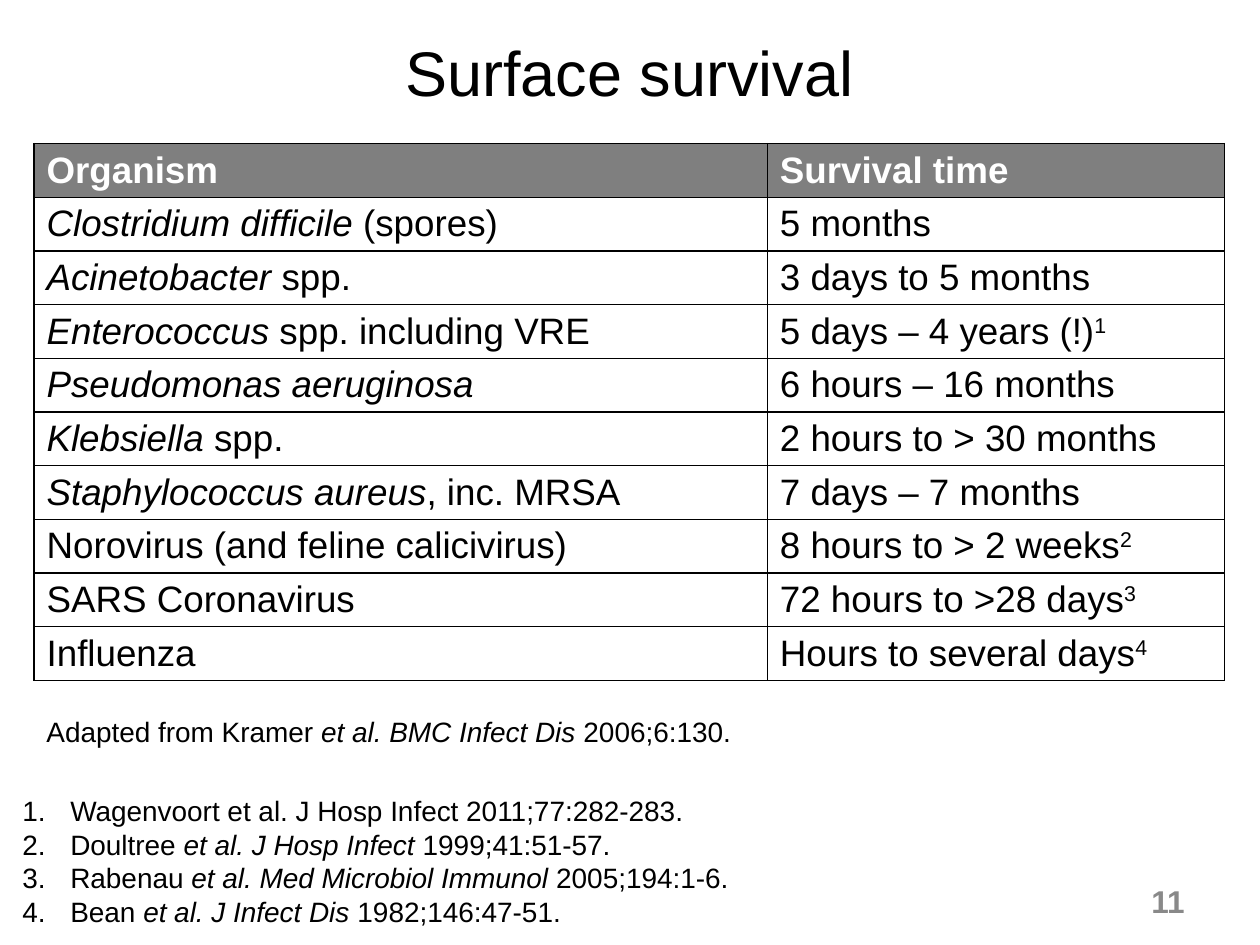
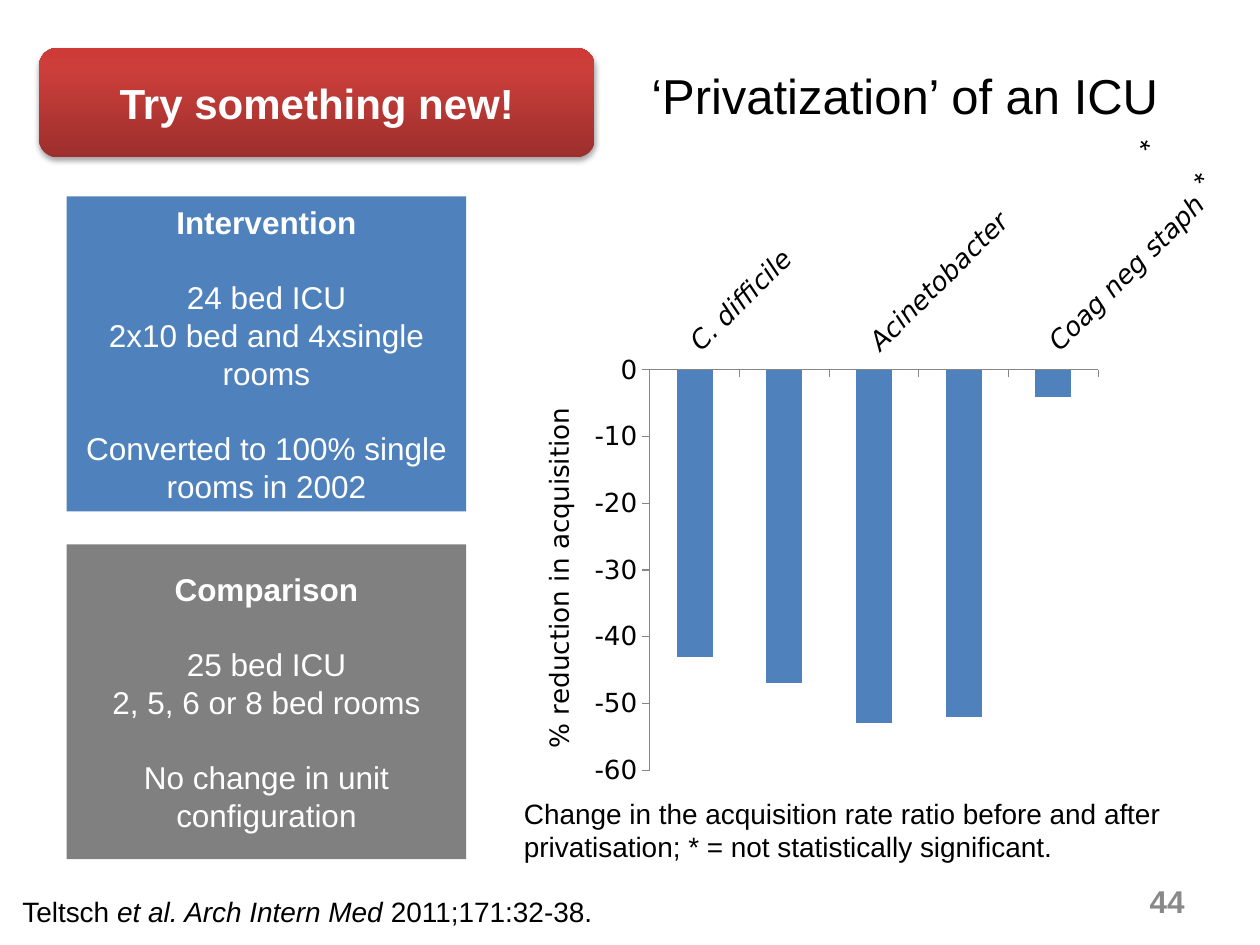
import copy

import pptx
import pptx.chart.data
import pptx.dml.color
import pptx.enum.chart
import pptx.enum.shapes
import pptx.enum.text
import pptx.oxml
import pptx.oxml.ns
import pptx.util

Inches = pptx.util.Inches
Pt = pptx.util.Pt
qn = pptx.oxml.ns.qn
ALIGN = pptx.enum.text.PP_ALIGN
ANCHOR = pptx.enum.text.MSO_ANCHOR
SHAPE = pptx.enum.shapes.MSO_SHAPE

COLORS = {
    "text": "000000",
    "white": "FFFFFF",
    "header": "7F7F7F",
    "blue": "4F81BD",
    "grey": "808080",
    "number": "898989",
    "axis": "868686",
}
BANNER_STOPS = [(0, "9C2F2D"), (0.8, "CB3E3A"), (1, "CE3B37")]

SURVIVAL = [
    ("Organism", "Survival time"),
    ("_Clostridium difficile_ (spores)", "5 months"),
    ("_Acinetobacter_ spp.", "3 days to 5 months"),
    ("_Enterococcus_ spp. including VRE", "5 days – 4 years (!)^1^"),
    ("_Pseudomonas aeruginosa_", "6 hours – 16 months"),
    ("_Klebsiella_ spp.", "2 hours to > 30 months"),
    ("_Staphylococcus aureus_, inc. MRSA", "7 days – 7 months"),
    ("Norovirus (and feline calicivirus)", "8 hours to > 2 weeks^2^"),
    ("SARS Coronavirus", "72 hours to >28 days^3^"),
    ("Influenza", "Hours to several days^4^"),
]
REFERENCES = [
    "Wagenvoort et al. J Hosp Infect 2011;77:282-283.",
    "Doultree _et al. J Hosp Infect_ 1999;41:51-57.",
    "Rabenau _et al. Med Microbiol Immunol_ 2005;194:1-6.",
    "Bean _et al. J Infect Dis_ 1982;146:47-51.",
]
ACQUISITION = [
    ("C. difficile", -43),
    ("", -47),
    ("Acinetobacter", -53),
    ("", -52),
    ("Coag neg staph", -4),
]


def rgb(value):
    return pptx.dml.color.RGBColor.from_string(COLORS.get(value, value))


def xml(text):
    """Parse one element whose tag carries the a: or c: prefix."""
    prefix = text[1]
    return pptx.oxml.parse_xml(
        text.replace(" ", f" {pptx.oxml.ns.nsdecls(prefix)} ", 1))


def apply(target, values):
    for name, value in values.items():
        setattr(target, name, value)


def set_layout(parent, index, fractions, target=""):
    """Place a chart part by x, y (w, h) fractions of the chart."""
    for layout in parent.findall(qn("c:layout")):
        parent.remove(layout)
    sizes = "".join(f'<c:{n} val="{v}"/>' for n, v in zip("xywh", fractions))
    parent.insert(index, xml(
        f'<c:layout ><c:manualLayout>{target}<c:xMode val="edge"/>'
        f'<c:yMode val="edge"/>{sizes}</c:manualLayout></c:layout>'))


class Deck:
    font = "Arial"

    def __init__(self):
        self.prs = pptx.Presentation()
        self.prs.slide_width, self.prs.slide_height = Inches(10), Inches(7.5)
        self.s = None

    def slide(self, number):
        self.s = self.prs.slides.add_slide(self.prs.slide_layouts[6])
        self.text((7.17, 6.95, 2.33, 0.4), [str(number)], 18, "number",
                  bold=True, align=ALIGN.RIGHT, anchor=ANCHOR.MIDDLE)

    def runs(self, p, text, size, color, bold=False):
        """Write text into p; _..._ is italic and ^...^ is superscript."""
        for i, part in enumerate(text.split("_")):
            for j, piece in enumerate(part.split("^")):
                if not piece:
                    continue
                r = p.add_run()
                r.text = piece
                apply(r.font, {"name": self.font, "size": Pt(size),
                               "bold": bold, "italic": i % 2 == 1})
                r.font.color.rgb = rgb(color)
                if j % 2:
                    r.font._element.set("baseline", "30000")

    def fill_frame(self, tf, lines, size, color, bold=False,
                   align=ALIGN.LEFT, anchor=ANCHOR.TOP):
        apply(tf, {"word_wrap": True, "vertical_anchor": anchor})
        for i, line in enumerate(lines):
            p = tf.add_paragraph() if i else tf.paragraphs[0]
            p.alignment = align
            self.runs(p, line, size, color, bold)

    def text(self, box, lines, size=16, color="text", rotation=0, **style):
        sp = self.s.shapes.add_textbox(*map(Inches, box))
        sp.rotation = rotation
        self.fill_frame(sp.text_frame, lines, size, color, **style)
        return sp

    def title(self, box, text, size, anchor=ANCHOR.MIDDLE):
        return self.text(box, [text], size, align=ALIGN.CENTER, anchor=anchor)

    def numbered(self, box, lines):
        sp = self.text(box, lines)
        for p in sp.text_frame.paragraphs:
            pPr = p._p.get_or_add_pPr()
            pPr.set("marL", str(Inches(0.38)))
            pPr.set("indent", str(-Inches(0.38)))
            pPr.append(xml('<a:buFont typeface="+mj-lt"/>'))
            pPr.append(xml('<a:buAutoNum type="arabicPeriod"/>'))

    def shape(self, kind, box):
        sp = self.s.shapes.add_shape(kind, *map(Inches, box))
        sp.shadow.inherit = False
        sp.line.fill.background()
        return sp

    def panel(self, top, color, heading, facts, result):
        sp = self.shape(SHAPE.RECTANGLE, (0.53, top, 3.17, 2.5))
        sp.fill.solid()
        sp.fill.fore_color.rgb = rgb(color)
        tf = sp.text_frame
        self.fill_frame(tf, [heading, *facts, result], 18, "white",
                        align=ALIGN.CENTER, anchor=ANCHOR.MIDDLE)
        tf.paragraphs[0].runs[0].font.bold = True
        for p in (tf.paragraphs[1], tf.paragraphs[-1]):
            p.space_before = Pt(21.5)

    def banner(self, box, text):
        sp = self.shape(SHAPE.ROUNDED_RECTANGLE, box)
        sp.fill.gradient()
        sp.fill.gradient_angle = 90
        stops = sp._element.spPr.find(f".//{qn('a:gsLst')}")
        stops.append(copy.deepcopy(stops[-1]))
        for stop, (position, color) in zip(sp.fill.gradient_stops, BANNER_STOPS):
            stop.position = position
            stop.color.rgb = rgb(color)
        sp._element.spPr.find(qn("a:effectLst")).append(xml(
            f'<a:outerShdw blurRad="{Pt(3.1)}" dist="{Pt(1.8)}" dir="5400000" '
            'rotWithShape="0"><a:srgbClr val="000000"><a:alpha val="35000"/>'
            '</a:srgbClr></a:outerShdw>'))
        self.fill_frame(sp.text_frame, [text], 24, "white", bold=True,
                        align=ALIGN.CENTER, anchor=ANCHOR.MIDDLE)
        sp.text_frame.paragraphs[0].space_before = Pt(2)

    def table(self, box, widths, rows):
        table = self.s.shapes.add_table(
            len(rows), len(widths), *map(Inches, box)).table
        for column, width in zip(table.columns, widths):
            column.width = Inches(width)
        for i, row in enumerate(rows):
            header = i == 0
            for j, text in enumerate(row):
                cell = table.cell(i, j)
                apply(cell, {"vertical_anchor": ANCHOR.MIDDLE,
                             "margin_top": Inches(0.03),
                             "margin_bottom": Inches(0.03)})
                cell.fill.solid()
                cell.fill.fore_color.rgb = rgb("header" if header else "white")
                self.runs(cell.text_frame.paragraphs[0], text, 21,
                          "white" if header else "text", header)
                self.borders(cell)

    def borders(self, cell):
        tcPr = cell._tc.get_or_add_tcPr()
        for k, side in enumerate("LRTB"):
            tcPr.insert(k, xml(
                f'<a:ln{side} w="{Pt(1)}"><a:solidFill><a:srgbClr '
                f'val="{COLORS["text"]}"/></a:solidFill></a:ln{side}>'))

    def column_chart(self, box, values, axis_title, title_at, plot):
        """Add a column chart; title_at and plot are fractions of the chart."""
        enum = pptx.enum.chart
        data = pptx.chart.data.CategoryChartData()
        data.categories = [label for label, _ in values]
        data.add_series("Series 1", [value for _, value in values])
        chart = self.s.shapes.add_chart(
            enum.XL_CHART_TYPE.COLUMN_CLUSTERED, *map(Inches, box), data).chart
        apply(chart, {"has_legend": False, "has_title": False})
        apply(chart.font, {"name": "DejaVu Sans", "size": Pt(15)})
        chart.font.color.rgb = rgb("text")

        bars = chart.plots[0]
        apply(bars, {"gap_width": 150, "vary_by_categories": False})
        series = bars.series[0]
        series.invert_if_negative = False
        series.format.fill.solid()
        series.format.fill.fore_color.rgb = rgb("blue")

        cat, val = chart.category_axis, chart.value_axis
        for axis in (cat, val):
            apply(axis, {"has_major_gridlines": False,
                         "major_tick_mark": enum.XL_TICK_MARK.OUTSIDE,
                         "minor_tick_mark": enum.XL_TICK_MARK.NONE})
            axis.format.line.color.rgb = rgb("axis")
        cat.tick_label_position = enum.XL_TICK_LABEL_POSITION.HIGH
        cat.tick_labels.font.italic = True
        apply(val, {"minimum_scale": -60, "maximum_scale": 0, "major_unit": 10})
        tf = val.axis_title.text_frame
        tf.text = axis_title
        apply(tf.paragraphs[0].runs[0].font,
              {"name": "DejaVu Sans", "size": Pt(15), "bold": False})

        root = chart.element
        for place, degrees in (("c:catAx/c:txPr", -45), ("c:valAx/c:title", -90)):
            body = root.xpath(f".//{place}//a:bodyPr")[0]
            body.set("rot", str(degrees * 60000))
            body.set("vert", "horz")
        set_layout(root.xpath(".//c:valAx/c:title")[0], 1, title_at)
        set_layout(root.xpath(".//c:plotArea")[0], 0, plot,
                   '<c:layoutTarget val="inner"/>')


def survival_slide(deck):
    deck.slide(11)
    deck.title((0.39, 0.06, 9.21, 1.01), "Surface survival", 36)
    deck.table((0.27, 1.14, 9.45, 4.26), (5.82, 3.63), SURVIVAL)
    deck.text((0.27, 5.62, 5.71, 0.37),
              ["Adapted from Kramer _et al. BMC Infect Dis_ 2006;6:130."])
    deck.numbered((0.08, 6.25, 5.87, 1.17), REFERENCES)


def privatization_slide(deck):
    deck.slide(44)
    deck.text((0.08, 7.05, 5.74, 0.37),
              ["Teltsch _et al. Arch Intern Med_ 2011;171:32-38."])
    deck.panel(1.56, "blue", "Intervention",
               ["24 bed ICU", "2x10 bed and 4xsingle rooms"],
               "Converted to 100% single rooms in 2002")
    deck.panel(4.32, "grey", "Comparison",
               ["25 bed ICU", "2, 5, 6 or 8 bed rooms"],
               "No change in unit configuration")
    deck.text((4.06, 6.27, 5.94, 0.64),
              ["Change in the acquisition rate ratio before and after "
               "privatisation; * = not statistically significant."])
    deck.column_chart((4.14, 1.06, 5.65, 5.21), ACQUISITION,
                      "% reduction in acquisition", (0.02, 0.41),
                      (0.18, 0.36, 0.63, 0.61))
    for left, top in ((9.34, 1.25), (8.91, 0.99)):
        deck.text((left, top, 0.39, 0.37), ["*"], rotation=315.5,
                  align=ALIGN.CENTER)
    sp = deck.title((3.9, 0.52, 6.56, 0.89), "‘Privatization’ of an ICU", 28,
                    ANCHOR.TOP)
    apply(sp.text_frame, dict.fromkeys(
        ("margin_left", "margin_right", "margin_top", "margin_bottom"), 0))
    deck.banner((0.31, 0.38, 4.41, 0.87), "Try something new!")


def main():
    deck = Deck()
    survival_slide(deck)
    privatization_slide(deck)
    deck.prs.save("out.pptx")


if __name__ == "__main__":
    main()
